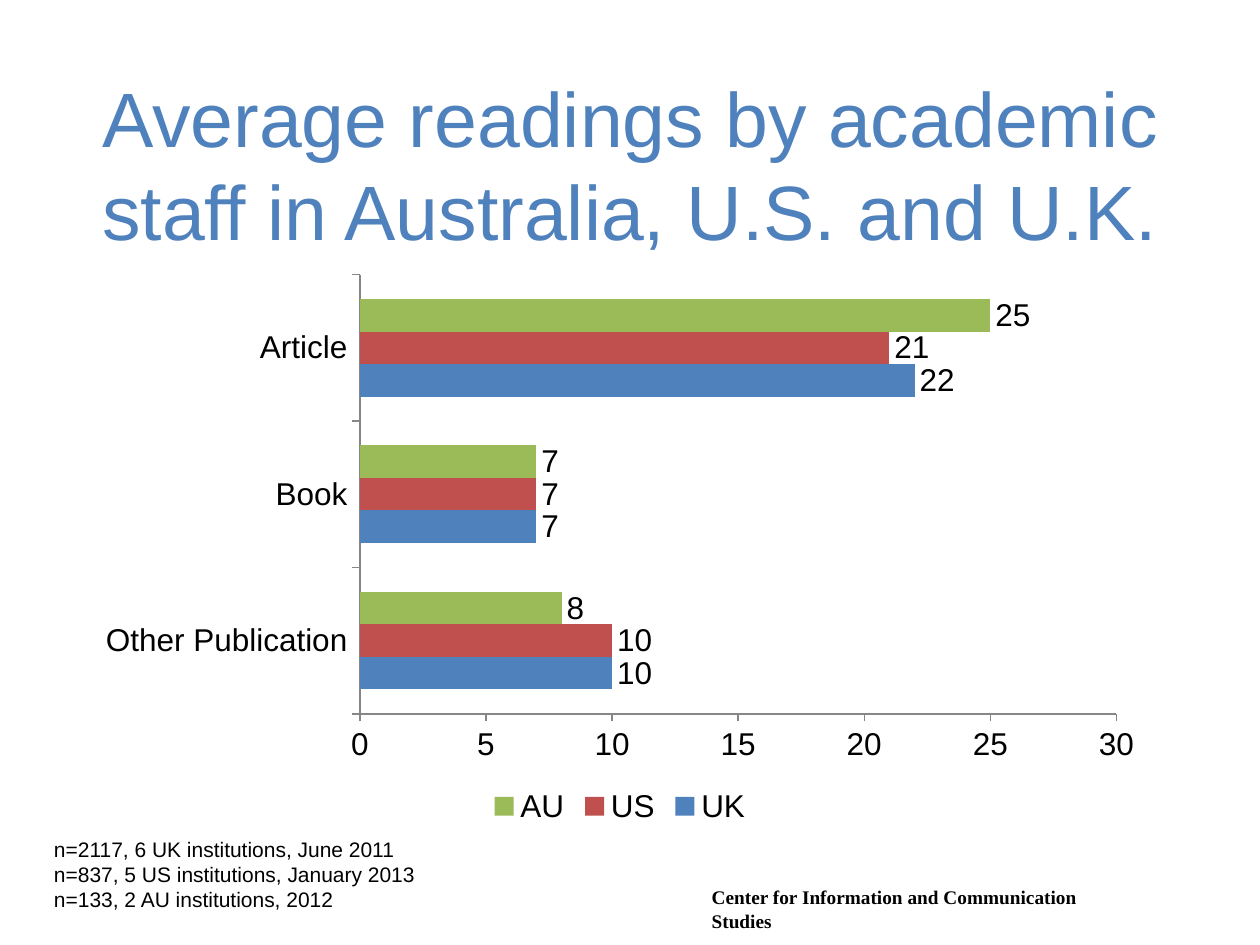
from pptx import Presentation
from pptx.chart.data import CategoryChartData
from pptx.dml.color import RGBColor
from pptx.enum.chart import (XL_CHART_TYPE, XL_LABEL_POSITION,
                             XL_LEGEND_POSITION, XL_TICK_MARK)
from pptx.enum.text import MSO_ANCHOR, MSO_AUTO_SIZE, PP_ALIGN
from pptx.util import Inches, Pt

BLUE = RGBColor(0x4F, 0x81, 0xBD)
RED = RGBColor(0xC0, 0x50, 0x4D)
GREEN = RGBColor(0x9B, 0xBB, 0x59)
GREY = RGBColor(0x86, 0x86, 0x86)
BLACK = RGBColor(0, 0, 0)

# Content
TITLE = "Average readings by academic staff in Australia, U.S. and U.K."
CENTER = "Center for Information and Communication Studies"
NOTES = [
    "n=2117, 6 UK institutions, June 2011",
    "n=837, 5 US institutions, January 2013",
    "n=133, 2 AU institutions, 2012",
]
KINDS = ["Other Publication", "Book", "Article"]
SERIES = [
    ("UK", (10, 7, 22), BLUE),
    ("US", (10, 7, 21), RED),
    ("AU", (8, 7, 25), GREEN),
]


def style(font, size, color=BLACK, name="Arial", bold=False):
    font.size, font.name, font.bold = Pt(size), name, bold
    font.color.rgb = color


def write(shape, lines, align=PP_ALIGN.LEFT, anchor=MSO_ANCHOR.TOP, **look):
    frame = shape.text_frame
    frame.word_wrap = True
    frame.auto_size = MSO_AUTO_SIZE.NONE
    frame.vertical_anchor = anchor
    for i, line in enumerate(lines):
        para = frame.paragraphs[0] if i == 0 else frame.add_paragraph()
        para.alignment = align
        run = para.add_run()
        run.text = line
        style(run.font, **look)


def box(*place):
    return [Inches(n) for n in place]


deck = Presentation()
deck.slide_width, deck.slide_height = Inches(10), Inches(7.5)
slide = deck.slides.add_slide(deck.slide_layouts[5])
shapes = slide.shapes

# Title
title = shapes.title
title.left, title.top, title.width, title.height = box(0.42, 0.67, 9.17, 1.25)
write(title, [TITLE], align=PP_ALIGN.CENTER, anchor=MSO_ANCHOR.MIDDLE,
      size=44, color=BLUE)

# Chart
data = CategoryChartData()
data.categories = KINDS
for name, vals, _ in SERIES:
    data.add_series(name, vals)
chart = shapes.add_chart(XL_CHART_TYPE.BAR_CLUSTERED,
                         *box(0.67, 2.09, 8.5, 4.5), data).chart
chart.has_title = False
style(chart.font, 18)
chart.has_legend = True
chart.legend.position = XL_LEGEND_POSITION.BOTTOM
chart.legend.include_in_layout = False

for axis in (chart.category_axis, chart.value_axis):
    axis.has_major_gridlines = False
    axis.major_tick_mark = XL_TICK_MARK.OUTSIDE
    axis.format.line.color.rgb = GREY
    axis.format.line.width = Pt(0.75)
scale = chart.value_axis
scale.minimum_scale, scale.maximum_scale, scale.major_unit = 0, 30, 5

plot = chart.plots[0]
plot.gap_width = 150
plot.vary_by_categories = False
for bar, (_, _, color) in zip(plot.series, SERIES):
    bar.format.fill.solid()
    bar.format.fill.fore_color.rgb = color
    labels = bar.data_labels
    labels.show_value = True
    labels.position = XL_LABEL_POSITION.OUTSIDE_END
    style(labels.font, 18)

# Sample sizes and footer
write(shapes.add_textbox(*box(0.33, 6.59, 4.08, 0.91)), NOTES, size=12)
write(shapes.add_textbox(*box(5.55, 6.98, 3.6, 0.28)), [CENTER],
      size=11, name="Times New Roman", bold=True)

deck.save("out.pptx")
